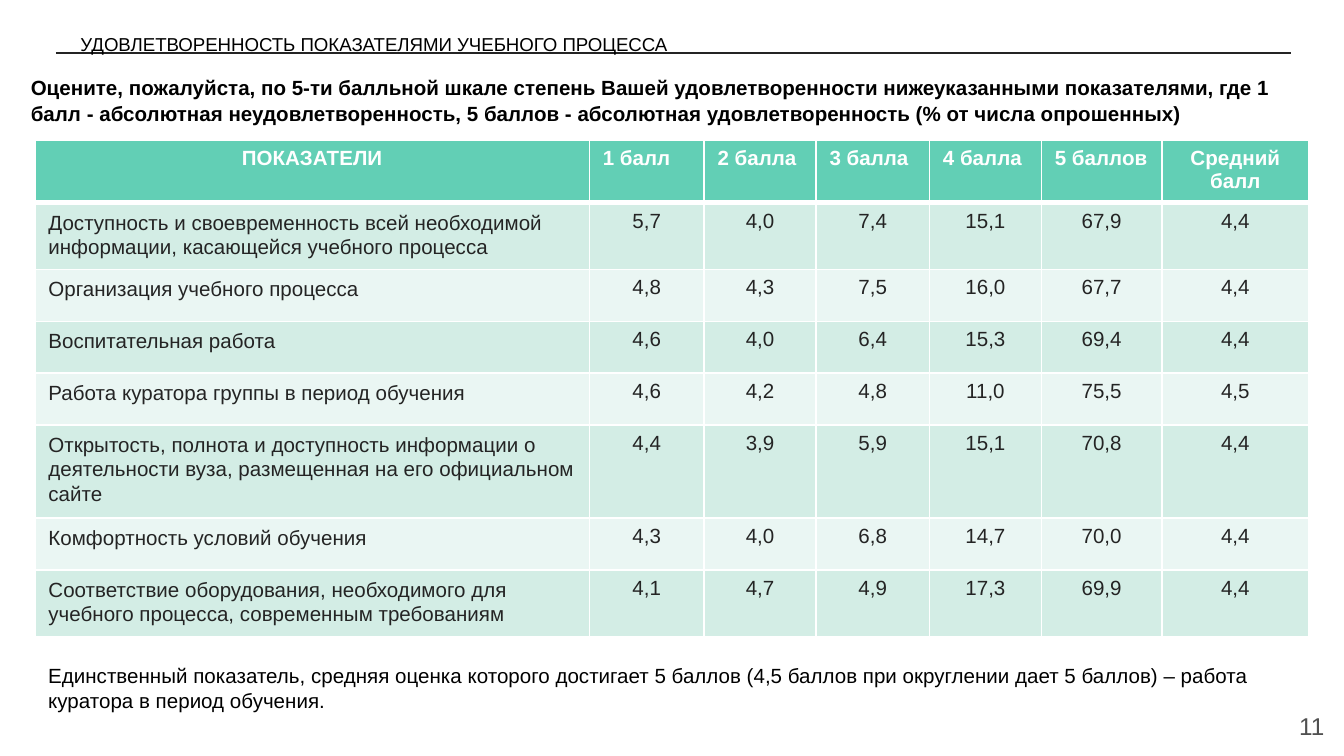
import pptx
import pptx.dml.color
import pptx.enum.shapes
import pptx.enum.text
import pptx.oxml
import pptx.oxml.ns
import pptx.util

ALIGN = pptx.enum.text.PP_ALIGN
COLUMN_WIDTHS = [396, 82, 80, 81, 80, 86, 105]
ROW_HEIGHTS = [45, 47, 37, 37, 37, 66, 37, 47]
HEADER = ["ПОКАЗАТЕЛИ", "1 балл", "2 балла", "3 балла", "4 балла", "5 баллов", "Средний балл"]
RATINGS = [
    ["Доступность и своевременность всей необходимой информации, касающейся учебного процесса",
     "5,7", "4,0", "7,4", "15,1", "67,9", "4,4"],
    ["Организация учебного процесса", "4,8", "4,3", "7,5", "16,0", "67,7", "4,4"],
    ["Воспитательная работа", "4,6", "4,0", "6,4", "15,3", "69,4", "4,4"],
    ["Работа куратора группы в период обучения", "4,6", "4,2", "4,8", "11,0", "75,5", "4,5"],
    ["Открытость, полнота и доступность информации о деятельности вуза, "
     "размещенная на его официальном сайте", "4,4", "3,9", "5,9", "15,1", "70,8", "4,4"],
    ["Комфортность условий обучения", "4,3", "4,0", "6,8", "14,7", "70,0", "4,4"],
    ["Соответствие оборудования, необходимого для учебного процесса, современным требованиям",
     "4,1", "4,7", "4,9", "17,3", "69,9", "4,4"],
]


def px(length):
    """Turn whole pixels into EMU at 96 pixels to the inch."""
    return pptx.util.Emu(length * 9525)


def color(value):
    """Turn a hex string into a colour."""
    return pptx.dml.color.RGBColor.from_string(value)


class SlideBuilder:
    """Hold the style and the current slide."""

    font = "Arial"
    black, ink, grey, white = "000000", "242424", "505050", "FFFFFF"
    header_fill, bands = "62CFB5", ["D3EDE5", "EAF6F3"]

    def __init__(self, slide):
        """Keep the slide to draw on."""
        self.slide = slide

    def paragraph(self, frame, text, size, ink, bold=False, align=ALIGN.LEFT, spacing=None):
        """Put one styled paragraph into a text frame."""
        para = frame.paragraphs[0]
        para.text = text
        para.alignment = align
        para.line_spacing = spacing
        para.font.name = self.font
        para.font.size = pptx.util.Pt(size)
        para.font.bold = bold
        para.font.color.rgb = color(ink)

    def text(self, place, text, size, ink, inset=None, **style):
        """Add a wrapping text box."""
        frame = self.slide.shapes.add_textbox(*map(px, place)).text_frame
        frame.word_wrap = True
        if inset is not None:
            frame.margin_left = frame.margin_right = px(inset)
            frame.margin_top = frame.margin_bottom = px(inset)
        self.paragraph(frame, text, size, ink, **style)

    def rule(self, left, right, top):
        """Add a thin horizontal line."""
        line = self.slide.shapes.add_connector(
            pptx.enum.shapes.MSO_CONNECTOR.STRAIGHT, px(left), px(top), px(right), px(top))
        line.line.color.rgb = color(self.ink)
        line.line.width = pptx.util.Pt(0.75)
        properties = line._element.spPr
        properties.append(properties.makeelement(pptx.oxml.ns.qn("a:effectLst"), {}))

    def borders(self, cell, top, bottom):
        """Draw white borders on a cell, with widths in points."""
        properties = cell._tc.get_or_add_tcPr()
        for side, width in (("L", 1), ("R", 1), ("T", top), ("B", bottom)):
            properties.append(pptx.oxml.parse_xml(
                f'<a:ln{side} {pptx.oxml.ns.nsdecls("a")} w="{pptx.util.Pt(width)}">'
                f'<a:solidFill><a:srgbClr val="{self.white}"/></a:solidFill></a:ln{side}>'))

    def table(self, left, top, widths, heights, rows):
        """Add a banded table with a header row."""
        table = self.slide.shapes.add_table(
            len(rows), len(widths), px(left), px(top), px(sum(widths)), px(sum(heights))).table
        for column, width in zip(table.columns, widths):
            column.width = px(width)
        for row, height in zip(table.rows, heights):
            row.height = px(height)
        for r, values in enumerate(rows):
            header = r == 0
            for c, value in enumerate(values):
                cell = table.cell(r, c)
                self.borders(cell, 3 if r == 1 else 1, 3 if header else 1)
                cell.fill.solid()
                cell.fill.fore_color.rgb = color(
                    self.header_fill if header else self.bands[(r - 1) % 2])
                centered = c in (0, len(widths) - 1) if header else c > 0
                self.paragraph(cell.text_frame, value, 11, self.white if header else self.ink,
                               bold=header, align=ALIGN.CENTER if centered else ALIGN.LEFT,
                               spacing=1.08 if c == 0 and not header else None)


def main():
    """Build the slide and save it."""
    deck = pptx.Presentation()
    deck.slide_width, deck.slide_height = px(960), px(540)
    page = SlideBuilder(deck.slides.add_slide(deck.slide_layouts[6]))
    page.rule(40, 922, 38)
    page.text((899, 498, 57, 41), "11", 13, page.grey, inset=10, align=ALIGN.RIGHT)
    page.text((12, 42, 924, 58),
              "Оцените, пожалуйста, по 5-ти балльной шкале степень Вашей удовлетворенности "
              "нижеуказанными показателями, где 1 балл - абсолютная неудовлетворенность, "
              "5 баллов - абсолютная удовлетворенность (% от числа опрошенных)",
              11, page.black, inset=10, bold=True, spacing=1.08)
    page.table(25, 100, COLUMN_WIDTHS, ROW_HEIGHTS, [HEADER] + RATINGS)
    page.text((25, 469, 910, 46),
              "Единственный показатель, средняя оценка которого достигает 5 баллов "
              "(4,5 баллов при округлении дает 5 баллов) – работа куратора в период обучения.",
              11, page.black)
    page.text((48, 19, 468, 27), "УДОВЛЕТВОРЕННОСТЬ ПОКАЗАТЕЛЯМИ УЧЕБНОГО ПРОЦЕССА",
              10, page.black)
    deck.save("out.pptx")


if __name__ == "__main__":
    main()
